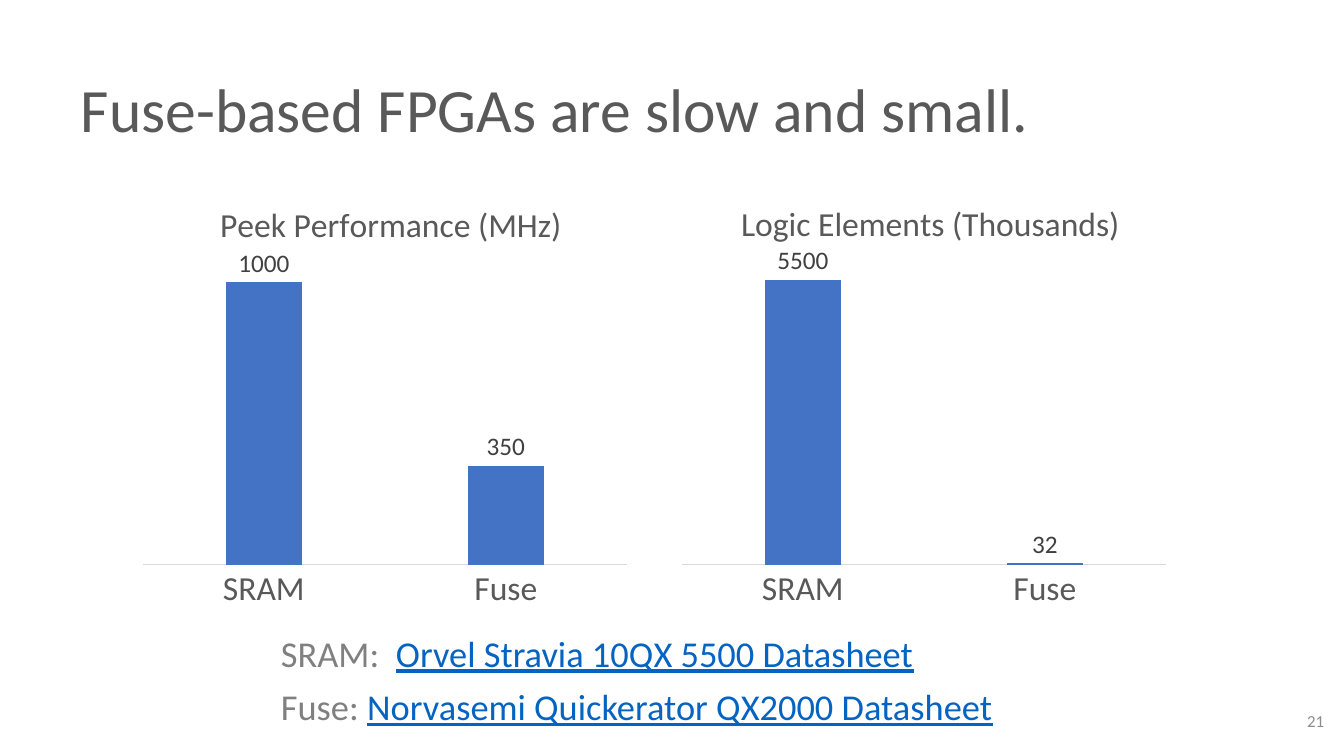
import pptx
import pptx.chart.data
import pptx.dml.color
import pptx.enum.chart
import pptx.enum.text
import pptx.util
from lxml import etree

# Content
TITLE = "Fuse-based FPGAs are slow and small."
CATS = ["SRAM", "Fuse"]
# name, values, axis range, chart box, left and top of the heading (px)
CHARTS = [
    ("Logic Elements (Thousands)", (5500, 32), (1, 6000), (672, 169, 504, 451), (735, 195)),
    ("Peek Performance (MHz)", (1000, 350), (0, 1100), (133, 170, 504, 449), (214, 196)),
]
SOURCES = [
    ("SRAM:  ", "Orvel Stravia 10QX 5500 Datasheet"),
    ("Fuse: ", "Norvasemi Quickerator QX2000 Datasheet"),
]
PAGE = "21"
BASE, PAD, PLOT = 565, 10, 311  # axis line, side margin and plot height (px)

THEME = {
    "font": "Calibri",
    "dark": "595959", "gray": "808080", "link": "0563C1", "page": "8C8C8C",
    "bar": "4472C4", "label": "404040", "rule": "D9D9D9",
    "title": 44, "body": 26, "head": 24, "value": 18, "small": 12,
}
ALIGN = pptx.enum.text.PP_ALIGN
ANCHOR = pptx.enum.text.MSO_ANCHOR


def px(n):
    return pptx.util.Emu(round(n * 914400 / 100.8))


def rgb(name):
    return pptx.dml.color.RGBColor.from_string(THEME[name])


def style(font, size, color):
    font.name = THEME["font"]
    font.size = pptx.util.Pt(THEME[size])
    font.color.rgb = rgb(color)
    font.bold = False


def text(lines, box, size, anchor=ANCHOR.TOP, align=ALIGN.LEFT, line=1.0, before=0):
    """Each line is a list of (words, color) runs."""
    frame = slide.shapes.add_textbox(*map(px, box)).text_frame
    frame.word_wrap = True
    frame.vertical_anchor = anchor
    for i, runs in enumerate(lines):
        para = frame.add_paragraph() if i else frame.paragraphs[0]
        para.alignment = align
        para.line_spacing = line
        para.space_before = pptx.util.Pt(before)
        for words, color in runs:
            run = para.add_run()
            run.text = words
            style(run.font, size, color)
            run.font.underline = color == "link"


def place(part, inner=False, **spots):
    """Fix the place of a chart part, in fractions of the chart."""
    ns = part.nsmap["c"]
    tag = "{%s}" % ns
    for old in part.findall(tag + "layout"):
        part.remove(old)
    layout = etree.Element(tag + "layout")
    manual = etree.SubElement(layout, tag + "manualLayout")
    pairs = [("layoutTarget", "inner")] if inner else []
    pairs += [("xMode", "edge"), ("yMode", "edge")]
    pairs += [(key, "%.4f" % val) for key, val in spots.items()]
    for key, val in pairs:
        etree.SubElement(manual, tag + key).set("val", val)
    text_part = part.find(tag + "tx")
    part.insert(0 if text_part is None else 1, layout)


def bars(name, values, span, box, spot):
    data = pptx.chart.data.CategoryChartData()
    data.categories = CATS
    data.add_series("Series 1", values)
    kind = pptx.enum.chart.XL_CHART_TYPE.COLUMN_CLUSTERED
    chart = slide.shapes.add_chart(kind, *map(px, box), data).chart
    chart.has_legend = False
    chart.font.name = THEME["font"]

    # Heading
    chart.has_title = True
    head = chart.chart_title
    head.text_frame.text = name
    style(head.text_frame.paragraphs[0].runs[0].font, "head", "dark")
    head.include_in_layout = False
    left, top, wide, high = box
    place(head._element, x=(spot[0] - left) / wide, y=(spot[1] - top) / high)
    place(chart._chartSpace.chart.plotArea, inner=True,
          x=PAD / wide, y=(BASE - PLOT - top) / high,
          w=(wide - 2 * PAD) / wide, h=PLOT / high)

    # Axes
    axis = chart.category_axis
    axis.major_tick_mark = pptx.enum.chart.XL_TICK_MARK.NONE
    axis.format.line.color.rgb = rgb("rule")
    axis.format.line.width = pptx.util.Pt(0.75)
    style(axis.tick_labels.font, "head", "dark")
    scale = chart.value_axis
    scale.minimum_scale, scale.maximum_scale = span
    scale.has_major_gridlines = False
    scale.visible = False

    # Columns and their values
    plot = chart.plots[0]
    plot.gap_width, plot.overlap = 219, -27
    plot.vary_by_categories = False
    fill = plot.series[0].format.fill
    fill.solid()
    fill.fore_color.rgb = rgb("bar")
    plot.has_data_labels = True
    labels = plot.data_labels
    labels.show_value = True
    labels.position = pptx.enum.chart.XL_LABEL_POSITION.OUTSIDE_END
    style(labels.font, "value", "label")


deck = pptx.Presentation()
deck.slide_width, deck.slide_height = px(1344), px(756)
slide = deck.slides.add_slide(deck.slide_layouts[6])

text([[(TITLE, "dark")]], (71, 40, 1182, 146), "title", anchor=ANCHOR.MIDDLE, line=0.9)
text([[(key, "gray"), (name, "link")] for key, name in SOURCES],
     (271, 631, 957, 121), "body", line=0.9, before=10)
for item in CHARTS:
    bars(*item)
text([[(PAGE, "page")]], (1252, 701, 82, 40), "small", anchor=ANCHOR.MIDDLE, align=ALIGN.RIGHT)

deck.save("out.pptx")
